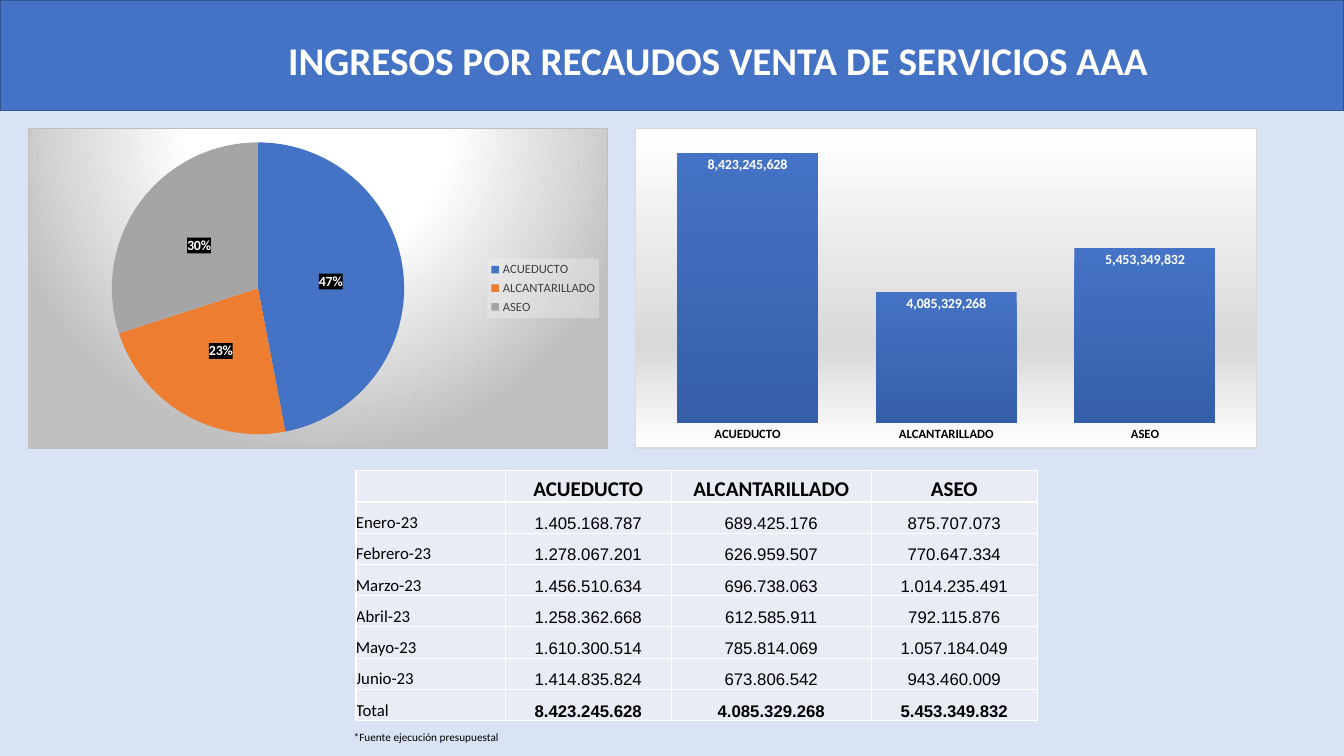
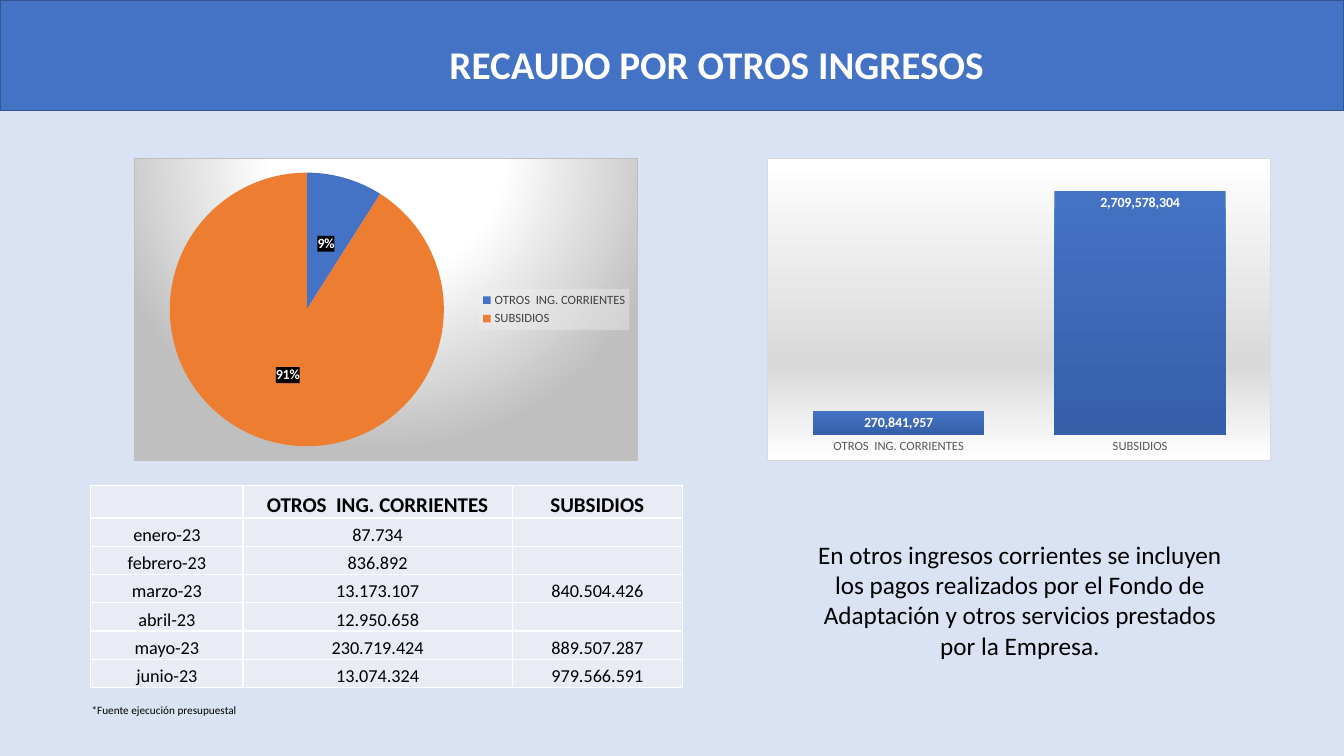
from dataclasses import dataclass

from lxml.etree import SubElement
from pptx import Presentation
from pptx.chart.data import CategoryChartData
from pptx.dml.color import RGBColor
from pptx.enum.chart import (XL_CHART_TYPE, XL_LABEL_POSITION,
                             XL_LEGEND_POSITION, XL_TICK_MARK)
from pptx.enum.shapes import MSO_SHAPE
from pptx.enum.text import MSO_ANCHOR, MSO_AUTO_SIZE, PP_ALIGN
from pptx.oxml import parse_xml
from pptx.oxml.ns import nsdecls, qn
from pptx.util import Inches, Pt

PALE = RGBColor(0xDA, 0xE3, 0xF3)
BLUE = RGBColor(0x44, 0x72, 0xC4)
DEEP = RGBColor(0x35, 0x5F, 0xA9)
NAVY = RGBColor(0x32, 0x54, 0x91)
ORANGE = RGBColor(0xED, 0x7D, 0x31)
GRAY = RGBColor(0xA5, 0xA5, 0xA5)
SILVER = RGBColor(0xBF, 0xBF, 0xBF)
LIGHT = RGBColor(0xD9, 0xD9, 0xD9)
MIST = RGBColor(0xF2, 0xF2, 0xF2)
SLATE = RGBColor(0x59, 0x59, 0x59)
DARK = RGBColor(0x40, 0x40, 0x40)
CELL = RGBColor(0xE9, 0xEB, 0xF5)
BLACK = RGBColor(0, 0, 0)
WHITE = RGBColor(0xFF, 0xFF, 0xFF)
SLICES = (BLUE, ORANGE, GRAY)
SANS, ARIAL = "Calibri", "Arial"
LINEAR = '<a:lin ang="5400000" scaled="0"/>'
RADIAL = ('<a:path path="circle"><a:fillToRect l="50000" t="-80000" '
          'r="50000" b="180000"/></a:path>')


@dataclass(frozen=True)
class Box:
    left: float
    top: float
    width: float
    height: float

    def emu(self) -> tuple:
        return tuple(map(Inches, (self.left, self.top, self.width, self.height)))


@dataclass(frozen=True)
class Style:
    size: float
    color: RGBColor = BLACK
    bold: bool = False
    face: str = SANS


@dataclass(frozen=True)
class Grid:
    box: Box
    cols: tuple
    head: float
    row: float
    data: tuple
    label: Style
    value: Style
    align: PP_ALIGN
    total: bool = False


@dataclass(frozen=True)
class Page:
    title: str
    place: Box
    names: tuple
    sums: tuple
    shares: tuple
    pie: Box
    bars: Box
    axis: Style
    grid: Grid
    source: Box


TITLE = Style(28, WHITE, True)
HEAD = Style(15, bold=True)
NOTE = Style(8)
BODY = Style(18)
TAG = Style(10, WHITE, True)
KEY = Style(9, DARK)

PAGES = (
    Page("INGRESOS POR RECAUDOS VENTA DE SERVICIOS AAA",
         Box(2.76, 0.31, 9.14, 0.57),
         ("ACUEDUCTO", "ALCANTARILLADO", "ASEO"),
         (8423245628, 4085329268, 5453349832), (47, 23, 30),
         Box(0.28, 1.27, 5.75, 3.18), Box(6.3, 1.27, 6.17, 3.18),
         Style(9, bold=True),
         Grid(Box(3.53, 4.67, 6.77, 2.49), (1.48, 1.65, 1.98, 1.65), 0.31, 0.31, (
             ("Enero-23", "1.405.168.787", "689.425.176", "875.707.073"),
             ("Febrero-23", "1.278.067.201", "626.959.507", "770.647.334"),
             ("Marzo-23", "1.456.510.634", "696.738.063", "1.014.235.491"),
             ("Abril-23", "1.258.362.668", "612.585.911", "792.115.876"),
             ("Mayo-23", "1.610.300.514", "785.814.069", "1.057.184.049"),
             ("Junio-23", "1.414.835.824", "673.806.542", "943.460.009"),
             ("Total", "8.423.245.628", "4.085.329.268", "5.453.349.832"),
         ), Style(12), Style(12, face=ARIAL), PP_ALIGN.LEFT, True),
         Box(3.41, 7.2, 1.66, 0.24)),
    Page("RECAUDO POR OTROS INGRESOS",
         Box(4.36, 0.35, 5.6, 0.57),
         ("OTROS  ING. CORRIENTES", "SUBSIDIOS"),
         (270841957, 2709578304), (9, 91),
         Box(1.33, 1.57, 5, 3), Box(7.61, 1.57, 5, 3),
         Style(9, SLATE),
         Grid(Box(0.9, 4.82, 5.86, 2), (1.51, 2.67, 1.69), 0.32, 0.28, (
             ("enero-23", "87.734", ""),
             ("febrero-23", "836.892", ""),
             ("marzo-23", "13.173.107", "840.504.426"),
             ("abril-23", "12.950.658", ""),
             ("mayo-23", "230.719.424", "889.507.287"),
             ("junio-23", "13.074.324", "979.566.591"),
         ), Style(13), Style(13), PP_ALIGN.CENTER),
         Box(0.81, 6.93, 1.66, 0.24)),
)


def dress(font, style: Style) -> None:
    font.size, font.bold, font.name = Pt(style.size), style.bold, style.face
    font.color.rgb = style.color


def write(para, text: str, style: Style, align: PP_ALIGN) -> None:
    para.alignment = align
    if text:
        run = para.add_run()
        run.text = text
        dress(run.font, style)
    else:
        SubElement(para._p, qn("a:endParaRPr"), sz=str(int(style.size * 100)))


def add_text(slide, box: Box, text: str, style: Style,
             align: PP_ALIGN = PP_ALIGN.LEFT) -> None:
    frame = slide.shapes.add_textbox(*box.emu()).text_frame
    frame.word_wrap = True
    frame.auto_size = MSO_AUTO_SIZE.SHAPE_TO_FIT_TEXT
    write(frame.paragraphs[0], text, style, align)


def solid(color: RGBColor, alpha: int) -> str:
    return (f'<a:solidFill><a:srgbClr val="{color}">'
            f'<a:alpha val="{alpha * 1000}"/></a:srgbClr></a:solidFill>')


def blend(stops: tuple, shape: str) -> str:
    marks = "".join(f'<a:gs pos="{pos * 1000}"><a:srgbClr val="{color}"/></a:gs>'
                    for pos, color in stops)
    return f'<a:gradFill><a:gsLst>{marks}</a:gsLst>{shape}</a:gradFill>'


def paint(part, fill: str, edge: RGBColor | None = None) -> None:
    """Give a chart part a fill and outline, just ahead of its text settings."""
    line = (f'<a:ln w="9525">{solid(edge, 100)}</a:ln>' if edge is not None
            else '<a:ln><a:noFill/></a:ln>')
    part.find(qn("c:txPr")).addprevious(
        parse_xml(f'<c:spPr {nsdecls("c", "a")}>{fill}{line}</c:spPr>'))


def add_chart(slide, kind: XL_CHART_TYPE, box: Box, names: tuple, vals: tuple):
    data = CategoryChartData()
    data.categories = names
    data.add_series("Series 1", vals)
    chart = slide.shapes.add_chart(kind, *box.emu(), data).chart
    chart.has_title = False
    dress(chart.font, Style(10))
    return chart


def add_tags(plot, form: str, spot: XL_LABEL_POSITION):
    plot.has_data_labels = True
    tags = plot.data_labels
    tags.number_format, tags.number_format_is_linked = form, False
    tags.position = spot
    dress(tags.font, TAG)
    return tags


def add_bars(slide, page: Page) -> None:
    chart = add_chart(slide, XL_CHART_TYPE.COLUMN_CLUSTERED, page.bars,
                      page.names, page.sums)
    chart.has_legend = False
    paint(chart.element, blend(((0, WHITE), (68, LIGHT), (100, WHITE)), LINEAR), LIGHT)
    plot = chart.plots[0]
    plot.gap_width, plot.vary_by_categories = 41, False
    add_tags(plot, "#,##0", XL_LABEL_POSITION.INSIDE_END).show_value = True
    fill = plot.series[0].format.fill
    fill.gradient()
    fill.gradient_angle = 270
    for stop, pos, color in zip(fill.gradient_stops, (0, 1), (BLUE, DEEP)):
        stop.position, stop.color.rgb = pos, color
    chart.value_axis.has_major_gridlines = False
    chart.value_axis.visible = False
    axis = chart.category_axis
    axis.major_tick_mark = XL_TICK_MARK.NONE
    axis.format.line.fill.background()
    dress(axis.tick_labels.font, page.axis)


def add_pie(slide, page: Page) -> None:
    chart = add_chart(slide, XL_CHART_TYPE.PIE, page.pie, page.names, page.shares)
    paint(chart.element, blend(((0, WHITE), (39, WHITE), (100, SILVER)), RADIAL), SILVER)
    chart.has_legend = True
    legend = chart.legend
    legend.position, legend.include_in_layout = XL_LEGEND_POSITION.RIGHT, False
    dress(legend.font, KEY)
    paint(legend._element, solid(MIST, 39))
    plot = chart.plots[0]
    plot.vary_by_categories = True
    tags = add_tags(plot, "0%", XL_LABEL_POSITION.CENTER)
    tags.show_percentage, tags.show_value = True, False
    paint(tags._element, solid(BLACK, 75))
    for spot, color in enumerate(SLICES[:len(page.shares)]):
        fill = plot.series[0].points[spot].format.fill
        fill.solid()
        fill.fore_color.rgb = color


def fill_cell(cell, text: str, style: Style, align: PP_ALIGN) -> None:
    cell.margin_left = cell.margin_right = cell.margin_top = cell.margin_bottom = 0
    cell.vertical_anchor = MSO_ANCHOR.BOTTOM
    for side in ("lnL", "lnR", "lnT", "lnB"):
        cell._tc.get_or_add_tcPr().append(parse_xml(
            f'<a:{side} {nsdecls("a")} w="12700">{solid(WHITE, 100)}</a:{side}>'))
    cell.fill.solid()
    cell.fill.fore_color.rgb = CELL
    write(cell.text_frame.paragraphs[0], text, style, align)


def add_grid(slide, grid: Grid, names: tuple) -> None:
    rows = (("", *names), *grid.data)
    table = slide.shapes.add_table(len(rows), len(grid.cols), *grid.box.emu()).table
    table.first_row = table.horz_banding = False
    for col, width in zip(table.columns, grid.cols):
        col.width = Inches(width)
    for r, row in enumerate(rows):
        table.rows[r].height = Inches(grid.row if r else grid.head)
        last = grid.total and r == len(rows) - 1
        bold = Style(grid.value.size, bold=last, face=grid.value.face)
        for c, text in enumerate(row):
            style = HEAD if r == 0 else bold if c else grid.label
            align = PP_ALIGN.CENTER if c else grid.align
            fill_cell(table.cell(r, c), text, style, align)


def add_page(deck, page: Page):
    slide = deck.slides.add_slide(deck.slide_layouts[6])
    slide.background.fill.solid()
    slide.background.fill.fore_color.rgb = PALE
    band = slide.shapes.add_shape(MSO_SHAPE.RECTANGLE, 0, 0,
                                  deck.slide_width, Inches(1.1))
    band.shadow.inherit = False
    band.fill.solid()
    band.fill.fore_color.rgb = BLUE
    band.line.color.rgb = NAVY
    band.line.width = Pt(1)
    add_text(slide, page.place, page.title, TITLE)
    add_grid(slide, page.grid, page.names)
    add_text(slide, page.source, "*Fuente ejecución presupuestal", NOTE)
    add_bars(slide, page)
    add_pie(slide, page)
    return slide


def main() -> None:
    deck = Presentation()
    deck.slide_width, deck.slide_height = Inches(13.33), Inches(7.5)
    slides = [add_page(deck, page) for page in PAGES]
    add_text(slides[1], Box(7.89, 5.3, 4.45, 1.31),
             "En otros ingresos corrientes se incluyen los pagos realizados por "
             "el Fondo de Adaptación y otros servicios prestados por la Empresa.",
             BODY, PP_ALIGN.CENTER)
    deck.save("out.pptx")


if __name__ == "__main__":
    main()
